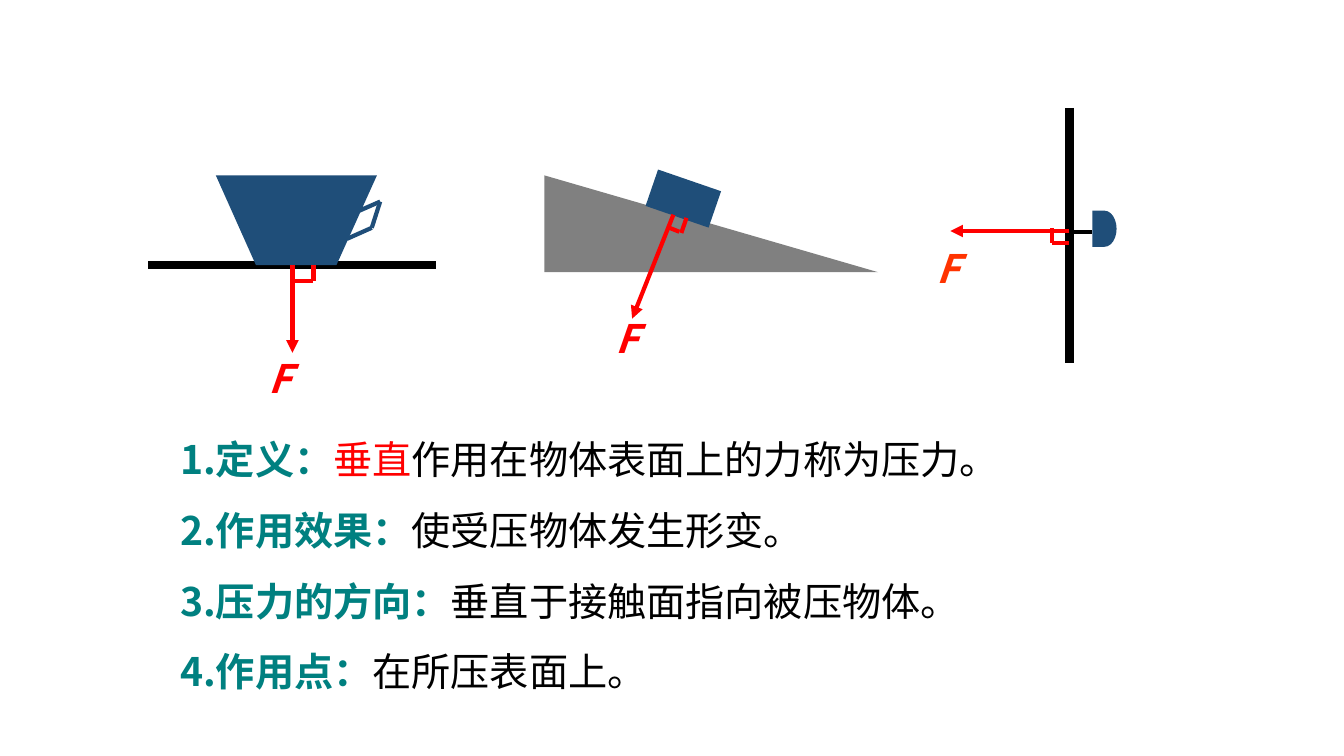
from lxml import etree
from pptx import Presentation
from pptx.dml.color import RGBColor
from pptx.enum.shapes import MSO_CONNECTOR, MSO_SHAPE
from pptx.oxml.ns import qn
from pptx.util import Cm, Pt

STRAIGHT = MSO_CONNECTOR.STRAIGHT
RAMP = MSO_SHAPE.RIGHT_TRIANGLE
BLOCK = MSO_SHAPE.RECTANGLE
KNOB = MSO_SHAPE.FLOWCHART_DELAY

FONT = "Noto Sans CJK SC"
BLACK, RED, ORANGE = "000000", "FF0000", "FF3300"
BLUE, GRAY, TEAL = "1F4E79", "808080", "008080"

# Each point: heading, red words, black words
POINTS = [
    ("1.定义：", "垂直", "作用在物体表面上的力称为压力。"),
    ("2.作用效果：", "", "使受压物体发生形变。"),
    ("3.压力的方向：", "", "垂直于接触面指向被压物体。"),
    ("4.作用点：", "", "在所压表面上。"),
]


def color(code):
    return RGBColor.from_string(code)


def paint(shape, code):
    shape.shadow.inherit = False
    shape.fill.solid()
    shape.fill.fore_color.rgb = color(code)
    shape.line.fill.background()


def add_shape(slide, kind, box, code, turn=0):
    shape = slide.shapes.add_shape(kind, *map(Cm, box))
    shape.rotation = turn
    paint(shape, code)


def add_outline(slide, points, code):
    start, *rest = [(Cm(x), Cm(y)) for x, y in points]
    builder = slide.shapes.build_freeform(*start)
    builder.add_line_segments(rest, close=True)
    paint(builder.convert_to_shape(), code)


def add_line(slide, start, end, code, width=3):
    line = slide.shapes.add_connector(STRAIGHT, *map(Cm, start + end))
    line.line.color.rgb = color(code)
    line.line.width = Pt(width)
    etree.SubElement(line._element.spPr, qn("a:effectLst"))
    return line


def add_force(slide, start, end):
    line = add_line(slide, start, end, RED)
    stroke = line.line._get_or_add_ln()
    etree.SubElement(stroke, qn("a:tailEnd"), type="triangle")


def add_text(slide, box):
    frame = slide.shapes.add_textbox(*map(Cm, box)).text_frame
    frame.word_wrap = True
    return frame


def add_run(para, text, code, bold=False, italic=False):
    run = para.add_run()
    run.text = text
    font = run.font
    font.name, font.size = FONT, Pt(28)
    font.bold, font.italic = bold, italic
    font.color.rgb = color(code)
    etree.SubElement(run._r.get_or_add_rPr(), qn("a:ea"), typeface=FONT)


def add_label(slide, left, top, width, code=RED):
    para = add_text(slide, (left, top, width, 1.45)).paragraphs[0]
    add_run(para, "F", code, bold=True, italic=True)


def draw_cup(slide):
    add_line(slide, (3.73, 6.68), (11, 6.68), BLACK, 6)
    cup = [(5.44, 4.42), (6.45, 6.68), (8.48, 6.68), (9.5, 4.42)]
    add_outline(slide, cup, BLUE)
    top, low = (9.58, 5.08), (9.37, 5.74)
    add_line(slide, top, low, BLUE)
    add_line(slide, (8.94, 5.36), top, BLUE)
    add_line(slide, (8.74, 6.02), low, BLUE)
    add_force(slide, (7.37, 6.68), (7.37, 8.89))
    add_line(slide, (7.32, 7.09), (7.9, 7.09), RED)
    add_line(slide, (7.9, 7.09), (7.9, 6.68), RED)
    add_label(slide, 6.53, 8.81, 3.86)


def draw_ramp(slide):
    add_shape(slide, RAMP, (13.72, 4.42, 8.41, 2.44), GRAY)
    add_shape(slide, BLOCK, (16.38, 4.52, 1.68, 0.97), BLUE, 19)
    add_force(slide, (16.97, 5.41), (15.93, 8.03))
    add_line(slide, (16.87, 5.74), (17.12, 5.84), RED)
    add_line(slide, (17.3, 5.49), (17.17, 5.87), RED)
    add_label(slide, 15.27, 7.8, 4.06)


def draw_wall(slide):
    add_line(slide, (26.95, 2.72), (26.95, 9.14), BLACK, 6)
    add_line(slide, (26.95, 5.84), (27.53, 5.84), BLACK)
    add_shape(slide, KNOB, (27.53, 5.31, 0.61, 0.91), BLUE)
    add_force(slide, (26.95, 5.82), (23.95, 5.82))
    add_line(slide, (26.52, 6.12), (26.95, 6.12), RED)
    add_line(slide, (26.52, 6.12), (26.52, 5.74), RED)
    add_label(slide, 23.34, 6.02, 1.73, ORANGE)


def write_points(slide):
    frame = add_text(slide, (4.29, 10.26, 24.31, 7.44))
    for i, (head, key, rest) in enumerate(POINTS):
        para = frame.add_paragraph() if i else frame.paragraphs[0]
        para.line_spacing = 1.5
        add_run(para, head, TEAL, bold=True)
        if key:
            add_run(para, key, RED)
        add_run(para, rest, BLACK)


def main():
    deck = Presentation()
    deck.slide_width, deck.slide_height = Cm(33.87), Cm(19.05)
    slide = deck.slides.add_slide(deck.slide_layouts[6])
    draw_cup(slide)
    draw_ramp(slide)
    draw_wall(slide)
    write_points(slide)
    deck.save("out.pptx")


if __name__ == "__main__":
    main()
